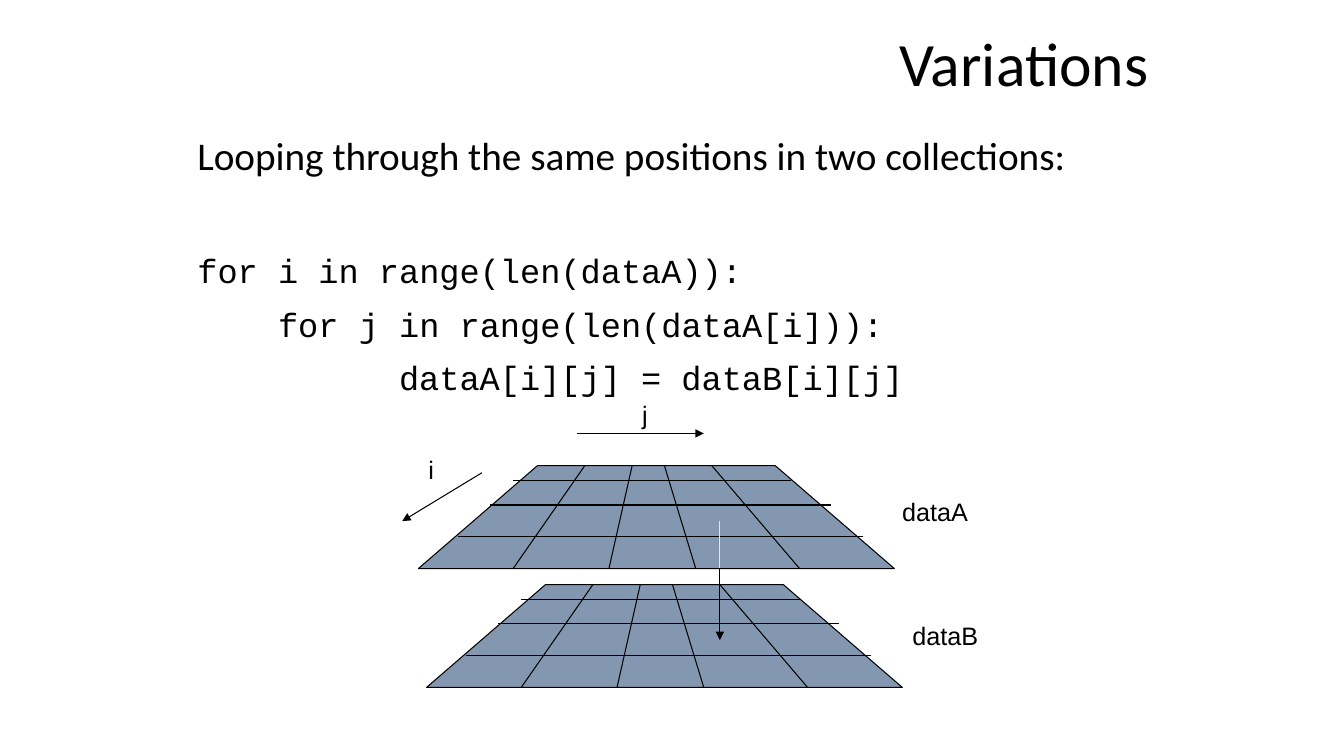
from pptx import Presentation
from pptx.dml.color import RGBColor as RGB
from pptx.enum.shapes import MSO_CONNECTOR as CONN
from pptx.enum.text import MSO_ANCHOR as ANCHOR, MSO_AUTO_SIZE as AUTO, PP_ALIGN as ALIGN
from pptx.oxml.ns import qn
from pptx.util import Emu, Pt
from lxml import etree

# Content: places are px, 100 to the inch
SLIDE = (1333, 750)
TITLE = ("Variations", (249, 28, 900, 77))
BODY_BOX = (186, 131, 953, 598)
# text, style, left indent px, space before pt
BODY = [
    ("Looping through the same positions in two collections:", "lead", 0, 10),
    ("for i in range(len(dataA)):", "code", 0, 54),
    ("for j in range(len(dataA[i])):", "code", 80, 12),
    ("dataA[i][j] = dataB[i][j]", "code", 200, 12),
]
# Corner of each grid; all grid parts are measured from it
GRIDS = [(415, 462), (423, 580)]
GRID_HEIGHT = 102
OUTLINE = [(0, GRID_HEIGHT), (118, 0), (354, 0), (472, GRID_HEIGHT)]
COLUMNS = [(94, 165), (189, 212), (275, 244), (378, 291)]  # bottom x, top x
ROWS = [(15, 94, 370), (39, 71, 409), (70, 39, 441)]  # y, left x, right x
# start, end, colour, arrowhead
POINTERS = [
    ((572, 430), (698, 430), "ink", True),
    ((478, 469), (399, 517), "ink", True),
    ((714, 564), (714, 635), "ink", True),
    ((714, 564), (714, 517), "pale", False),
]
LABELS = [
    ("j", (627, 391, 26, 40)),
    ("i", (415, 446, 26, 40)),
    ("dataA", (885, 487, 86, 40)),
    ("dataB", (895, 611, 86, 40)),
]

THEME = {
    "ink": RGB(0x00, 0x00, 0x00),
    "pale": RGB(0xE7, 0xE6, 0xE6),
    "grid": RGB(0x84, 0x97, 0xB0),
    "line": Pt(0.75),
    "title": {"name": "Calibri", "size": Pt(44)},
    "lead": {"name": "Calibri", "size": Pt(28)},
    "code": {"name": "Courier New", "size": Pt(24)},
    "label": {"name": "Arial", "size": Pt(18)},
}


def px(n):
    return Emu(n * 9144)


def shift(corner, point):
    return corner[0] + point[0], corner[1] + point[1]


def apply(target, **values):
    for name, value in values.items():
        setattr(target, name, value)


def add_box(s, box, **frame):
    tf = s.shapes.add_textbox(*map(px, box)).text_frame
    apply(tf, **{"word_wrap": True, **frame})
    return tf


def write(p, text, style, **paragraph):
    apply(p, **paragraph)
    r = p.add_run()
    r.text = text
    apply(r.font, **THEME[style])
    r.font.color.rgb = THEME["ink"]


def add_line(s, start, end, color="ink", arrow=False):
    sp = s.shapes.add_connector(CONN.STRAIGHT, *map(px, start + end))
    sp.line.color.rgb = THEME[color]
    sp.line.width = THEME["line"]
    if arrow:
        etree.SubElement(sp.line._get_or_add_ln(), qn("a:tailEnd"), type="triangle")
    etree.SubElement(sp._element.spPr, qn("a:effectLst"))


def add_grid(s, corner):
    first, *rest = [tuple(map(px, shift(corner, pt))) for pt in OUTLINE]
    builder = s.shapes.build_freeform(*first)
    builder.add_line_segments(rest, close=True)
    sp = builder.convert_to_shape()
    sp.shadow.inherit = False
    sp.fill.solid()
    sp.fill.fore_color.rgb = THEME["grid"]
    sp.line.color.rgb = THEME["ink"]
    sp.line.width = THEME["line"]
    for bottom, top in COLUMNS:
        add_line(s, shift(corner, (bottom, GRID_HEIGHT)), shift(corner, (top, 0)))
    for y, left, right in ROWS:
        add_line(s, shift(corner, (left, y)), shift(corner, (right, y)))


def main():
    prs = Presentation()
    prs.slide_width, prs.slide_height = map(px, SLIDE)
    s = prs.slides.add_slide(prs.slide_layouts[6])

    # Title
    text, box = TITLE
    tf = add_box(s, box, vertical_anchor=ANCHOR.MIDDLE)
    write(tf.paragraphs[0], text, "title", alignment=ALIGN.RIGHT, line_spacing=0.9)

    # Heading and code
    tf = add_box(s, BODY_BOX)
    for n, (text, style, indent, before) in enumerate(BODY):
        p = tf.add_paragraph() if n else tf.paragraphs[0]
        write(p, text, style, line_spacing=0.9, space_before=Pt(before))
        p._p.get_or_add_pPr().set("marL", str(px(indent)))

    # Grids, pointers and labels
    for corner in GRIDS:
        add_grid(s, corner)
    for pointer in POINTERS:
        add_line(s, *pointer)
    for text, box in LABELS:
        tf = add_box(s, box, word_wrap=False, auto_size=AUTO.SHAPE_TO_FIT_TEXT)
        write(tf.paragraphs[0], text, "label")

    prs.save("out.pptx")


if __name__ == "__main__":
    main()
